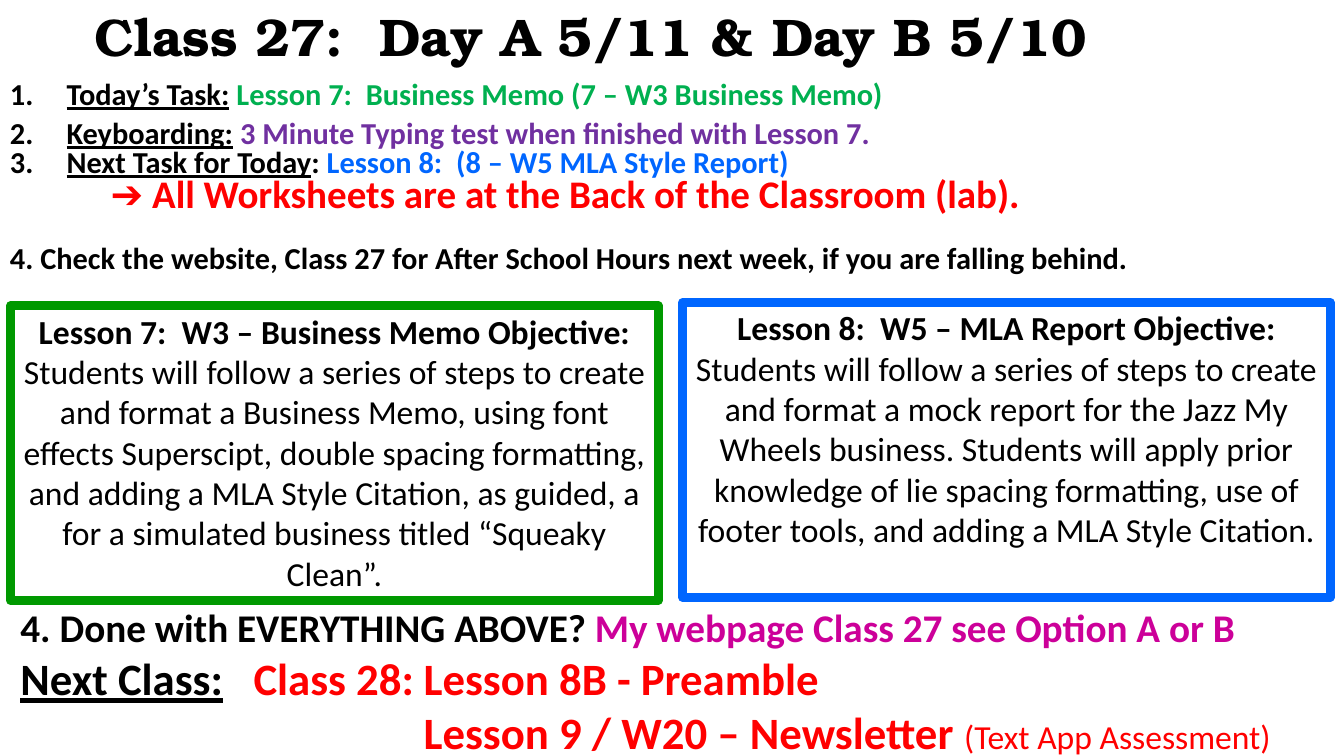
from lxml import etree
from pptx import Presentation
from pptx import util as u
from pptx.dml.color import RGBColor
from pptx.enum import shapes, text
from pptx.oxml.ns import qn

PX = 9525  # EMU per px, 96 px to the inch
COLORS = {
    "black": "000000", "task": "00B050", "typing": "7030A0", "blue": "0066FF",
    "red": "FF0000", "green": "009900", "pink": "CC0099",
}


def px(n):
    return u.Emu(n * PX)


def add_run(p, content, size=24, color="black", bold=True, underline=False, font="Calibri"):
    r = p.add_run()
    r.text = content
    f = r.font
    f.name, f.size, f.bold, f.underline = font, u.Pt(size), bold, underline
    f.color.rgb = RGBColor.from_string(COLORS[color])


class SlideBuilder:
    def __init__(self, prs):
        self.s = prs.slides.add_slide(prs.slide_layouts[6])

    def text_box(self, x, y, w, h, anchor=text.MSO_ANCHOR.TOP):
        tf = self.s.shapes.add_textbox(px(x), px(y), px(w), px(h)).text_frame
        tf.word_wrap = True
        tf.vertical_anchor = anchor
        return tf

    def paragraph(self, tf, runs, spacing=1.0, before=0, indent=0, hanging=0,
                  tabs=(), numbered=False, align=text.PP_ALIGN.LEFT):
        p = tf.paragraphs[0]
        if p.runs:
            p = tf.add_paragraph()
        p.alignment, p.line_spacing, p.space_before = align, spacing, u.Pt(before)
        pPr = p._p.get_or_add_pPr()
        if indent:
            pPr.set("marL", str(px(indent)))
            pPr.set("indent", str(px(-hanging)))
        if numbered:
            etree.SubElement(pPr, qn("a:buFont"), typeface="+mj-lt")
            etree.SubElement(pPr, qn("a:buAutoNum"), type="arabicPeriod")
        if tabs:
            tab_list = etree.SubElement(pPr, qn("a:tabLst"))
            for pos in tabs:
                etree.SubElement(tab_list, qn("a:tab"), pos=str(px(pos)), algn="l")
        for content, fmt in runs:
            add_run(p, content, **fmt)

    def objective(self, x, y, color, heading, body):
        sp = self.s.shapes.add_shape(shapes.MSO_SHAPE.RECTANGLE, px(x), px(y), px(617), px(281))
        sp.shadow.inherit = False
        sp.fill.background()
        sp.line.color.rgb = RGBColor.from_string(COLORS[color])
        sp.line.width = u.Pt(6)
        tf = sp.text_frame
        tf.word_wrap = True
        tf.vertical_anchor = text.MSO_ANCHOR.TOP
        for content, bold in ((heading, True), (body, False)):
            self.paragraph(tf, [(content, dict(bold=bold))], align=text.PP_ALIGN.CENTER)


def main():
    prs = Presentation()
    prs.slide_width, prs.slide_height = px(1280), px(720)
    b = SlideBuilder(prs)

    # Numbered agenda
    agenda = b.text_box(0, 76, 1280, 197)
    size = 21.7
    tasks = [
        ("Today’s Task:", " ", "Lesson 7:  Business Memo (7 – W3 Business Memo)", "task", 0.7, 10),
        ("Keyboarding:", " ", "3 Minute Typing test when finished with Lesson 7.", "typing", 0.7, 10),
        ("Next Task for Today", ": ", "Lesson 8:  (8 – W5 MLA Style Report)", "blue", 0.8, 0),
    ]
    for label, gap, detail, color, spacing, before in tasks:
        b.paragraph(agenda, [(label, dict(size=size, underline=True)), (gap, dict(size=size)),
                             (detail, dict(size=size, color=color))],
                    spacing, before, indent=54, hanging=54, numbered=True)
    b.paragraph(agenda, [("➔ All Worksheets are at the Back of the Classroom (lab).",
                          dict(size=27.9, color="red"))], 0.8, indent=96)
    b.paragraph(agenda, [("4. Check the website, Class 27 for After School Hours next week, "
                          "if you are falling behind.", dict(size=size))], 0.8, before=21.2)

    # Title
    title = b.text_box(81, 5, 964, 72, text.MSO_ANCHOR.MIDDLE)
    b.paragraph(title, [("Class 27:  Day A 5/11 & Day B 5/10",
                         dict(size=37.8, font="TeX Gyre Bonum"))], 0.7)

    # What comes next
    after = b.text_box(10, 575, 1280, 224)
    b.paragraph(after, [("4. Done with EVERYTHING ABOVE? ", dict(size=28)),
                        ("My webpage Class 27 see Option A or B", dict(size=28, color="pink"))],
                0.9, before=10)
    b.paragraph(after, [("Next Class:", dict(size=32, underline=True)),
                        ("\tClass 28:\tLesson 8B - Preamble", dict(size=32, color="red"))],
                tabs=(222, 384))
    b.paragraph(after, [("Lesson 9 / W20 – Newsletter ", dict(size=32, color="red")),
                        ("(Text App Assessment)", dict(color="red", bold=False))], indent=384)

    # Lesson objectives
    b.objective(10, 291, "green", "Lesson 7:  W3 – Business Memo Objective:",
                "Students will follow a series of steps to create and format a Business Memo, "
                "using font effects Superscipt, double spacing formatting, and adding a MLA Style "
                "Citation, as guided, a for a simulated business titled “Squeaky Clean”.")
    b.objective(650, 288, "blue", "Lesson 8:  W5 – MLA Report Objective:",
                "Students will follow a series of steps to create and format a mock report for the "
                "Jazz My Wheels business. Students will apply prior knowledge of lie spacing "
                "formatting, use of footer tools, and adding a MLA Style Citation.")

    prs.save("out.pptx")


if __name__ == "__main__":
    main()
